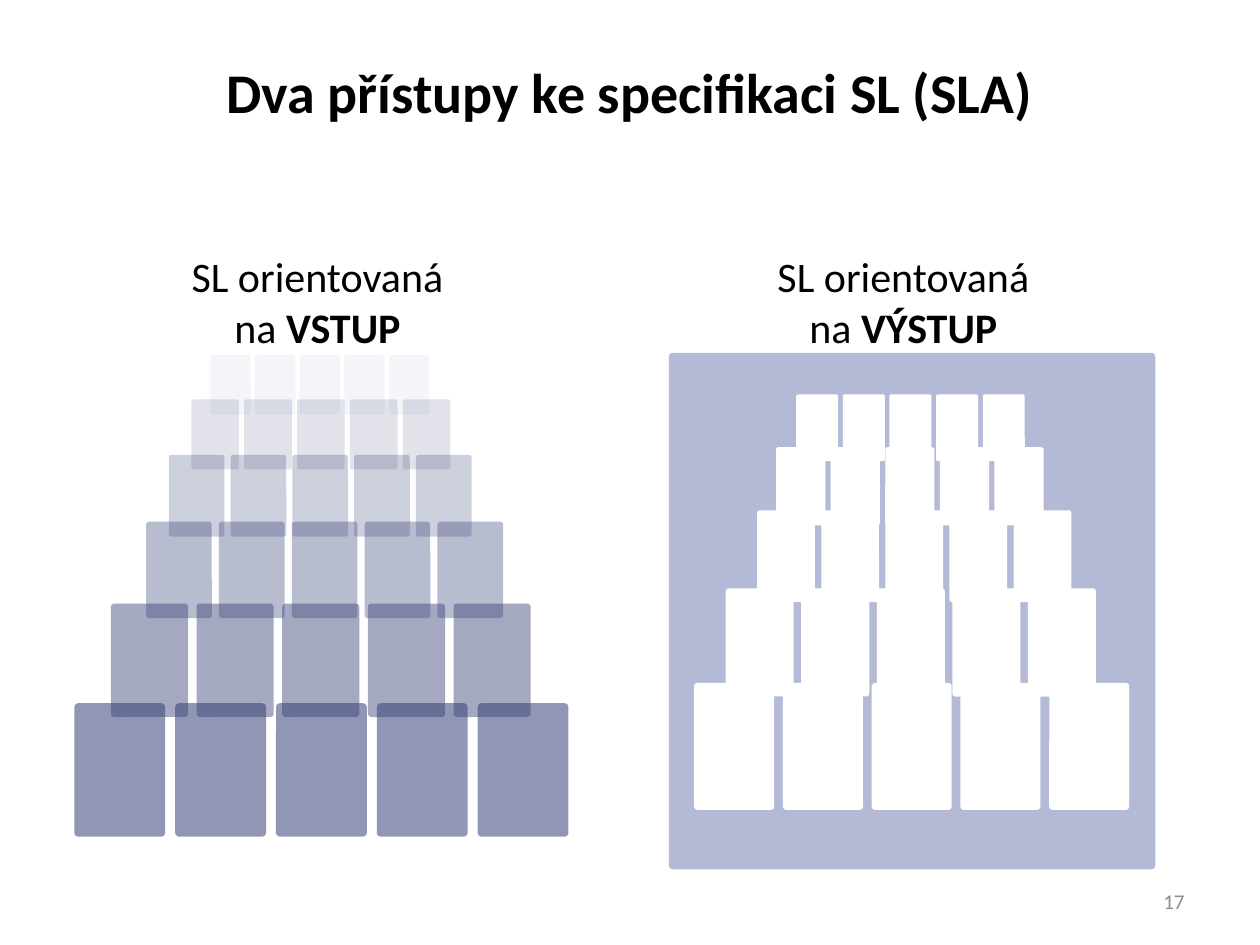
from dataclasses import dataclass

from lxml.etree import SubElement
from pptx import Presentation
from pptx.dml.color import RGBColor
from pptx.enum.shapes import MSO_SHAPE
from pptx.enum.text import MSO_ANCHOR, PP_ALIGN
from pptx.oxml.ns import qn
from pptx.util import Pt


@dataclass(frozen=True)
class Theme:
    font: str = "Calibri"
    text: str = "000000"
    muted: str = "8C8C8C"
    block: str = "364176"
    panel: str = "7782B3"
    paper: str = "FFFFFF"
    title: int = 32
    label: int = 24
    small: int = 12


THEME = Theme()
COUNT = 5      # blocks in a row
PITCH = 1.11   # step between blocks, in block widths

# Rows from back to front: left, top, block width, opacity in percent
INPUT = [
    (120.2, 203, 23, 5),
    (109.4, 228.2, 27.2, 15),
    (96.5, 259.9, 31.8, 25),
    (83.5, 298.1, 37.5, 35),
    (63.4, 344.9, 44.1, 45),
    (42.5, 401.8, 51.9, 55),
]
# Rows from back to front: left, top, block width
OUTPUT = [
    (455, 225.4, 24),
    (443.5, 255.6, 28.1),
    (432.7, 291.6, 33),
    (414.7, 336.2, 38.9),
    (396.7, 390.2, 45.7),
]


def style(para, size, color, align):
    para.alignment = align
    para.font.name = THEME.font
    para.font.size = Pt(size)
    para.font.color.rgb = RGBColor.from_string(color)


def add_block(slide, box, color, alpha=100, round=0.044):
    shape = slide.shapes.add_shape(
        MSO_SHAPE.ROUNDED_RECTANGLE, *(Pt(v) for v in box))
    shape.adjustments[0] = round
    shape.shadow.inherit = False
    shape.line.fill.background()
    shape.fill.solid()
    shape.fill.fore_color.rgb = RGBColor.from_string(color)
    if alpha < 100:
        tint = shape._element.spPr.find(
            f"{qn('a:solidFill')}/{qn('a:srgbClr')}")
        SubElement(tint, qn("a:alpha"), val=str(alpha * 1000))


def add_row(slide, left, top, width, ratio, color, alpha=100):
    for i in range(COUNT):
        box = (left + i * PITCH * width, top, width, ratio * width)
        add_block(slide, box, color, alpha)


def add_label(slide, left, word):
    box = slide.shapes.add_textbox(Pt(left), Pt(139.7), Pt(159.8), Pt(65.5))
    frame = box.text_frame
    frame.word_wrap = False
    first, last = frame.paragraphs[0], frame.add_paragraph()
    first.text = "SL orientovaná"
    last.add_run().text = "na "
    bold = last.add_run()
    bold.text = word
    bold.font.bold = True
    for para in (first, last):
        style(para, THEME.label, THEME.text, PP_ALIGN.CENTER)


def set_title(slide, text):
    title = slide.shapes.title
    title.left, title.top = Pt(36), Pt(21.6)
    title.width, title.height = Pt(648), Pt(61.2)
    title.text = text
    title.text_frame.vertical_anchor = MSO_ANCHOR.MIDDLE
    para = title.text_frame.paragraphs[0]
    style(para, THEME.title, THEME.text, PP_ALIGN.CENTER)
    para.font.bold = True


def add_number(slide, text):
    box = slide.shapes.add_textbox(Pt(516), Pt(500.4), Pt(168), Pt(28.8))
    frame = box.text_frame
    frame.word_wrap = True
    frame.vertical_anchor = MSO_ANCHOR.MIDDLE
    frame.text = text
    style(frame.paragraphs[0], THEME.small, THEME.muted, PP_ALIGN.RIGHT)


def main():
    deck = Presentation()
    deck.slide_width, deck.slide_height = Pt(720), Pt(540)
    slide = deck.slides.add_slide(deck.slide_layouts[5])

    # Title and page number
    set_title(slide, "Dva přístupy ke specifikaci SL (SLA)")
    add_number(slide, "17")

    # Input side: blocks that fade toward the back
    for left, top, width, alpha in INPUT:
        add_row(slide, left, top, width, 1.47, THEME.block, alpha)
    add_label(slide, 101.5, "VSTUP")

    # Output side: white blocks on a panel
    add_block(slide, (382.3, 201.6, 277.9, 295.2), THEME.panel, 55, 0.008)
    for left, top, width in OUTPUT:
        add_row(slide, left, top, width, 1.59, THEME.paper)
    add_label(slide, 436.3, "VÝSTUP")

    deck.save("out.pptx")


if __name__ == "__main__":
    main()
